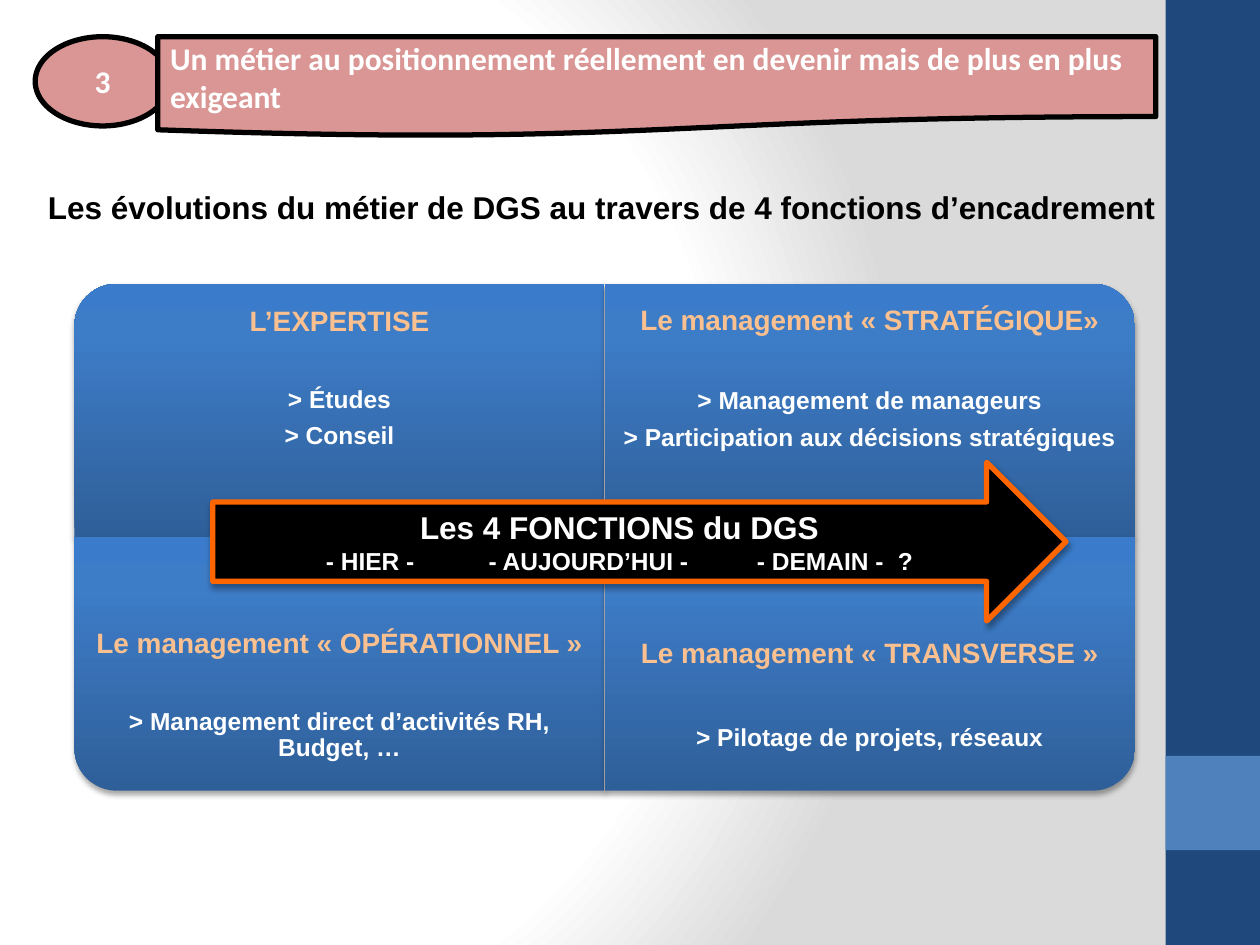
from dataclasses import dataclass

from pptx import Presentation
from pptx.dml.color import RGBColor
from pptx.enum.shapes import MSO_SHAPE
from pptx.enum.text import MSO_ANCHOR, MSO_AUTO_SIZE, PP_ALIGN
from pptx.oxml import parse_xml
from pptx.oxml.ns import nsdecls, qn
from pptx.shapes.autoshape import Shape
from pptx.slide import Slide
from pptx.text.text import TextFrame, _Paragraph
from pptx.util import Cm, Pt

BLACK = RGBColor(0x00, 0x00, 0x00)
WHITE = RGBColor(0xFF, 0xFF, 0xFF)
GREY = RGBColor(0xDA, 0xDA, 0xDA)
NAVY = RGBColor(0x1F, 0x49, 0x7D)
BLUE = RGBColor(0x4F, 0x81, 0xBD)
PINK = RGBColor(0xD9, 0x96, 0x94)
PEACH = RGBColor(0xFA, 0xC0, 0x90)
ORANGE = RGBColor(0xFF, 0x66, 0x00)

BACKGROUND_STOPS = [(0, WHITE), (75, WHITE), (100, GREY)]
QUADRANT_STOPS = [
    (0, RGBColor(0x2F, 0x5F, 0x99)),
    (80, RGBColor(0x3D, 0x7C, 0xC7)),
    (100, RGBColor(0x3A, 0x7C, 0xCB)),
]
RADIAL = (
    '<a:path path="circle">'
    '<a:fillToRect l="20000" t="50000" r="100000" b="50000"/></a:path>'
)
UPWARD = '<a:lin ang="16200000" scaled="0"/>'

MATRIX_LEFT, MATRIX_TOP = 1.5, 5.72
QUADRANT_WIDTH, QUADRANT_HEIGHT = 10.69, 5.11
TEXT_HEIGHT = 3.83
TAB_STOPS = [2.03, 5.31, 10.72, 13.56]


@dataclass
class Box:
    left: float
    top: float
    width: float
    height: float

    def lengths(self) -> list:
        return [Cm(value) for value in (self.left, self.top, self.width, self.height)]


@dataclass
class Quadrant:
    column: int
    row: int
    rotation: int
    heading: str
    heading_gap: float
    items: list[str]


QUADRANTS = [
    Quadrant(0, 0, 270, "L’EXPERTISE", 28, ["> Études", "> Conseil"]),
    Quadrant(1, 0, 0, "Le management « STRATÉGIQUE»", 30,
             ["> Management de manageurs", "> Participation aux décisions stratégiques"]),
    Quadrant(0, 1, 180, "Le management « OPÉRATIONNEL »", 28,
             ["> Management direct d’activités RH, Budget, …"]),
    Quadrant(1, 1, 90, "Le management « TRANSVERSE »", 32,
             ["> Pilotage de projets, réseaux"]),
]


def gradient(stops: list, direction: str):
    stop_list = "".join(
        f'<a:gs pos="{position * 1000}"><a:srgbClr val="{color}"/></a:gs>'
        for position, color in stops
    )
    return parse_xml(
        f'<a:gradFill {nsdecls("a")} rotWithShape="0">'
        f"<a:gsLst>{stop_list}</a:gsLst>{direction}</a:gradFill>"
    )


def add_shadow(shape: Shape) -> None:
    effects = shape.element.spPr.find(qn("a:effectLst"))
    effects.append(parse_xml(
        f'<a:outerShdw {nsdecls("a")} blurRad="{Pt(3.1)}" dist="{Pt(1.8)}" '
        'dir="5400000" rotWithShape="0"><a:srgbClr val="000000">'
        '<a:alpha val="35000"/></a:srgbClr></a:outerShdw>'
    ))


def add_figure(slide: Slide, kind: MSO_SHAPE, box: Box, fill: RGBColor | None = None,
               line: RGBColor | None = None) -> Shape:
    shape = slide.shapes.add_shape(kind, *box.lengths())
    shape.shadow.inherit = False
    if fill is not None:
        shape.fill.solid()
        shape.fill.fore_color.rgb = fill
    if line is None:
        shape.line.fill.background()
    else:
        shape.line.color.rgb = line
        shape.line.width = Pt(3)
    return shape


def write(frame: TextFrame, text: str, size: float, color: RGBColor = WHITE,
          font: str = "Arial", align: PP_ALIGN = PP_ALIGN.CENTER) -> _Paragraph:
    paragraph = frame.paragraphs[0]
    if paragraph.runs:
        paragraph = frame.add_paragraph()
    paragraph.alignment = align
    run = paragraph.add_run()
    run.text = text
    run.font.size = Pt(size)
    run.font.name = font
    run.font.bold = True
    run.font.color.rgb = color
    frame.vertical_anchor = MSO_ANCHOR.MIDDLE
    frame.word_wrap = True
    return paragraph


def add_title(slide: Slide) -> None:
    title = slide.shapes.title
    title.left, title.top, title.width, title.height = Box(0.71, 3.66, 23.6, 1.02).lengths()
    write(title.text_frame, "Les évolutions du métier de DGS au travers de 4 fonctions d’encadrement",
          18, BLACK, align=PP_ALIGN.LEFT)
    title.text_frame.auto_size = MSO_AUTO_SIZE.NONE


def add_banner(slide: Slide) -> None:
    number = add_figure(slide, MSO_SHAPE.OVAL, Box(0.71, 0.74, 2.72, 1.8), PINK, BLACK)
    write(number.text_frame, "3", 18, font="Calibri")
    banner = add_figure(slide, MSO_SHAPE.FLOWCHART_DOCUMENT,
                        Box(3.18, 0.74, 20.12, 2.01), PINK, BLACK)
    write(banner.text_frame,
          "Un métier au positionnement réellement en devenir mais de plus en plus exigeant",
          18, font="Calibri", align=PP_ALIGN.LEFT)


def add_quadrant(slide: Slide, quadrant: Quadrant) -> None:
    left = MATRIX_LEFT + quadrant.column * QUADRANT_WIDTH
    top = MATRIX_TOP + quadrant.row * QUADRANT_HEIGHT
    width, height = QUADRANT_WIDTH, QUADRANT_HEIGHT
    if quadrant.rotation % 180:
        width, height = height, width
    box = Box(left + (QUADRANT_WIDTH - width) / 2, top + (QUADRANT_HEIGHT - height) / 2,
              width, height)
    tile = add_figure(slide, MSO_SHAPE.ROUND_1_RECTANGLE, box)
    tile.rotation = quadrant.rotation
    tile.element.spPr.find(qn("a:prstGeom")).addnext(gradient(QUADRANT_STOPS, UPWARD))
    add_shadow(tile)

    text_top = top + quadrant.row * (QUADRANT_HEIGHT - TEXT_HEIGHT)
    text_box = Box(left, text_top, QUADRANT_WIDTH, TEXT_HEIGHT)
    frame = slide.shapes.add_textbox(*text_box.lengths()).text_frame
    frame.margin_left = frame.margin_right = frame.margin_top = frame.margin_bottom = Cm(0.3)
    heading = write(frame, quadrant.heading, 16, PEACH)
    heading.line_spacing = 0.9
    heading.space_after = Pt(quadrant.heading_gap)
    for item in quadrant.items:
        paragraph = write(frame, item, 14)
        paragraph.line_spacing = 0.9
        paragraph.space_after = Pt(5.5)


def add_timeline_arrow(slide: Slide) -> None:
    arrow = add_figure(slide, MSO_SHAPE.RIGHT_ARROW, Box(4.29, 9.32, 17.2, 3.2), BLACK, ORANGE)
    add_shadow(arrow)
    write(arrow.text_frame, "Les 4 FONCTIONS du DGS", 18)
    periods = write(arrow.text_frame, "\t- HIER -\t- AUJOURD’HUI -\t- DEMAIN -\t?", 14,
                    align=PP_ALIGN.LEFT)
    tabs = "".join(f'<a:tab pos="{Cm(stop)}" algn="l"/>' for stop in TAB_STOPS)
    periods._p.get_or_add_pPr().append(
        parse_xml(f'<a:tabLst {nsdecls("a")}>{tabs}</a:tabLst>'))


def main() -> None:
    presentation = Presentation()
    presentation.slide_width, presentation.slide_height = Cm(25.4), Cm(19.05)
    slide = presentation.slides.add_slide(presentation.slide_layouts[5])
    slide.background.fill.solid()
    background = slide.element.find(".//" + qn("p:bgPr"))
    background.replace(background[0], gradient(BACKGROUND_STOPS, RADIAL))

    add_figure(slide, MSO_SHAPE.RECTANGLE, Box(23.5, 0, 1.9, 19.05), NAVY)
    add_figure(slide, MSO_SHAPE.RECTANGLE, Box(23.5, 15.24, 1.9, 1.9), BLUE)
    add_title(slide)
    add_banner(slide)
    for quadrant in QUADRANTS:
        add_quadrant(slide, quadrant)
    add_timeline_arrow(slide)
    presentation.save("out.pptx")


if __name__ == "__main__":
    main()
